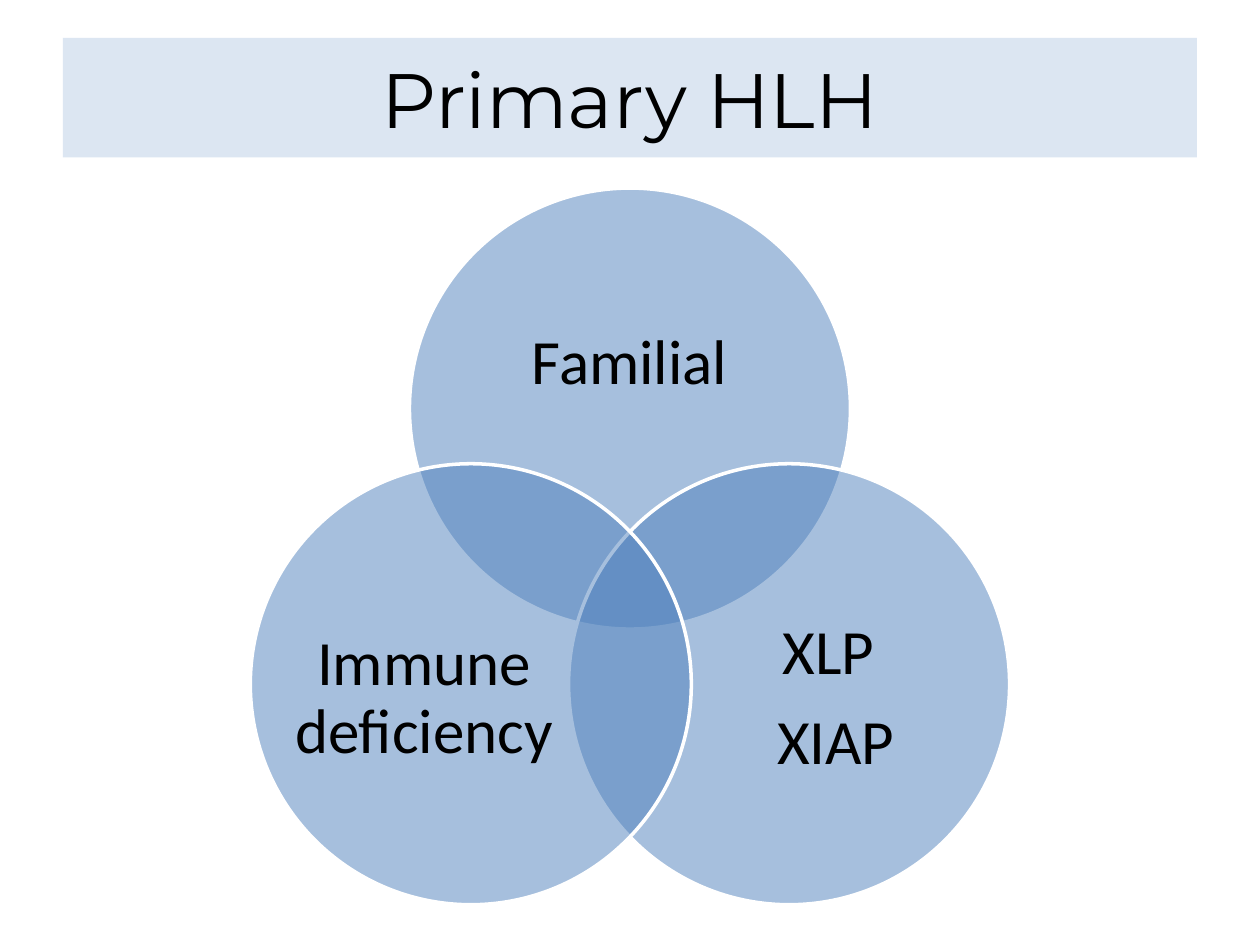
import math

from lxml import etree
from pptx import Presentation
from pptx.dml.color import RGBColor
from pptx.enum import shapes, text
from pptx.oxml import ns
from pptx.util import Pt

COLORS = {"band": "DCE6F2", "circle": "4F81BD", "outline": "FFFFFF", "ink": "000000"}

VENN_SETS = [
    (["Familial"], -90, (0.133, 0.175, 0.733, 0.45)),
    (["XLP ", "XIAP"], 30, (0.306, 0.258, 0.6, 0.55)),
    (["Immune deficiency"], 150, (0.094, 0.258, 0.6, 0.55)),
]


def color(key):
    return RGBColor.from_string(COLORS[key])


def style_paragraph(paragraph, font_name, size):
    paragraph.alignment = text.PP_ALIGN.CENTER
    paragraph.font.name = font_name
    paragraph.font.size = Pt(size)
    paragraph.font.color.rgb = color("ink")


def add_title(slide, title, left, top, width, height):
    band = slide.shapes.add_shape(
        shapes.MSO_SHAPE.RECTANGLE, Pt(left), Pt(top), Pt(width), Pt(height))
    band.shadow.inherit = False
    band.fill.solid()
    band.fill.fore_color.rgb = color("band")
    band.line.fill.background()
    frame = band.text_frame
    frame.text = title
    frame.vertical_anchor = text.MSO_ANCHOR.MIDDLE
    style_paragraph(frame.paragraphs[0], "Montserrat", 44)


def add_circle(group, left, top, diameter):
    circle = group.shapes.add_shape(
        shapes.MSO_SHAPE.OVAL, Pt(left), Pt(top), Pt(diameter), Pt(diameter))
    circle.shadow.inherit = False
    circle.fill.solid()
    circle.fill.fore_color.rgb = color("circle")
    fill_color = circle.fill._xPr.find(ns.qn("a:solidFill"))[0]
    etree.SubElement(fill_color, ns.qn("a:alpha"), val="50000")
    circle.line.color.rgb = color("outline")
    circle.line.width = Pt(2)


def add_label(group, lines, left, top, width, height):
    label = group.shapes.add_textbox(Pt(left), Pt(top), Pt(width), Pt(height))
    frame = label.text_frame
    frame.text = "\n".join(lines)
    frame.word_wrap = True
    frame.vertical_anchor = text.MSO_ANCHOR.MIDDLE
    frame.margin_left = frame.margin_right = 0
    frame.margin_top = frame.margin_bottom = 0
    for paragraph in frame.paragraphs:
        style_paragraph(paragraph, "Calibri", 36)
        paragraph.line_spacing = 0.9
        paragraph.space_after = Pt(12.6)


def add_venn(slide, center_x, top, diameter):
    group = slide.shapes.add_group_shape()
    spread = diameter * 5 / 12
    center_y = top + diameter / 2 + spread
    for lines, degrees, (x, y, w, h) in VENN_SETS:
        angle = math.radians(degrees)
        left = center_x + spread * math.cos(angle) - diameter / 2
        circle_top = center_y + spread * math.sin(angle) - diameter / 2
        add_circle(group, left, circle_top, diameter)
        add_label(group, lines, left + x * diameter, circle_top + y * diameter,
                  w * diameter, h * diameter)


def main():
    deck = Presentation()
    deck.slide_width, deck.slide_height = Pt(720), Pt(540)
    slide = deck.slides.add_slide(deck.slide_layouts[6])
    add_venn(slide, 360, 107.5, 252)
    add_title(slide, "Primary HLH", 36, 21.6, 648, 68.4)
    deck.save("out.pptx")


if __name__ == "__main__":
    main()
